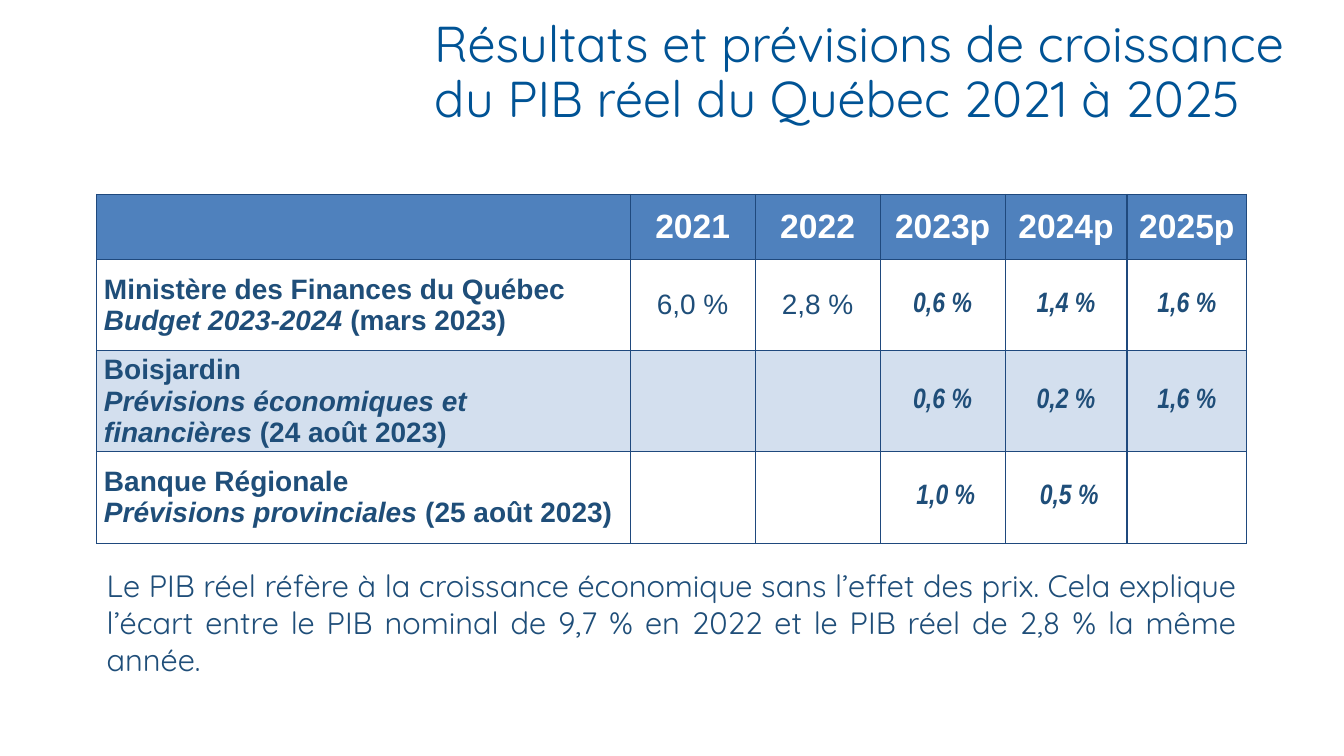
import pptx
import pptx.dml.color
import pptx.enum.text
import pptx.oxml
import pptx.oxml.ns
import pptx.util

Cm = pptx.util.Cm
ALIGN = pptx.enum.text.PP_ALIGN
COLOURS = {"title": "005395", "text": "1F4E79", "white": "FFFFFF",
           "header": "4F81BD", "band": "D3DFEE", "border": "1F497D"}
COLUMNS = [13.44, 3.15, 3.15, 3.15, 3.07, 3.02]
ROWS = [1.63, 2.31, 2.26, 2.31]
YEARS = ["", "2021", "2022", "2023p", "2024p", "2025p"]
FORECASTS = [
    (("Ministère des Finances du Québec", "Budget 2023-2024 ", "(mars 2023)"),
     ["6,0 %", "2,8 %", "0,6 %", "1,4 %", "1,6 %"]),
    (("Boisjardin", "Prévisions économiques et financières ", "(24 août 2023)"),
     ["", "", "0,6 %", "0,2 %", "1,6 %"]),
    (("Banque Régionale", "Prévisions provinciales ", "(25 août 2023)"),
     ["", "", " 1,0 %", " 0,5 %", ""]),
]


def add_span(para, text, size=20, font="Arial", colour="text", bold=False, italic=False):
    """Append formatted text to a paragraph."""
    span = para.add_run()
    span.text = text
    span.font.size = pptx.util.Pt(size)
    span.font.name = font
    span.font.bold = bold
    span.font.italic = italic
    span.font.color.rgb = pptx.dml.color.RGBColor.from_string(COLOURS[colour])


def add_text(page, box, text, align=ALIGN.LEFT, spacing=1.0, **style):
    """Place a wrapped text box holding one paragraph."""
    frame = page.shapes.add_textbox(*map(Cm, box)).text_frame
    frame.word_wrap = True
    para = frame.paragraphs[0]
    para.alignment = align
    para.line_spacing = spacing
    add_span(para, text, **style)


def style_cell(cell, fill):
    """Give a cell its borders, margins and fill."""
    properties = cell._tc.get_or_add_tcPr()
    for side in ("lnL", "lnR", "lnT", "lnB"):
        properties.append(pptx.oxml.parse_xml(
            f'<a:{side} {pptx.oxml.ns.nsdecls("a")} w="12700"><a:solidFill>'
            f'<a:srgbClr val="{COLOURS["border"]}"/></a:solidFill></a:{side}>'))
    cell.vertical_anchor = pptx.enum.text.MSO_ANCHOR.MIDDLE
    cell.margin_left = cell.margin_right = Cm(0.18)
    cell.margin_top = cell.margin_bottom = 0
    cell.fill.solid()
    cell.fill.fore_color.rgb = pptx.dml.color.RGBColor.from_string(COLOURS[fill])


def fill_value(cell, text, **style):
    """Write centred text in a cell that has any."""
    if text:
        para = cell.text_frame.paragraphs[0]
        para.alignment = ALIGN.CENTER
        add_span(para, text, **style)


def fill_source(cell, name, publication, date):
    """Write the forecaster, its publication and the date."""
    frame = cell.text_frame
    add_span(frame.paragraphs[0], name, bold=True)
    para = frame.add_paragraph()
    add_span(para, publication, bold=True, italic=True)
    add_span(para, date, bold=True)


def add_forecasts(page, left, top):
    """Build the table of growth results and forecasts."""
    table = page.shapes.add_table(len(ROWS), len(COLUMNS), Cm(left), Cm(top),
                                  Cm(sum(COLUMNS)), Cm(sum(ROWS))).table
    for column, width in zip(table.columns, COLUMNS):
        column.width = Cm(width)
    for row, height, fill in zip(table.rows, ROWS, ["header", "white", "band", "white"]):
        row.height = Cm(height)
        for cell in row.cells:
            style_cell(cell, fill)
    for index, year in enumerate(YEARS):
        fill_value(table.cell(0, index), year, size=24, colour="white", bold=True)
    for line, (source, values) in enumerate(FORECASTS, 1):
        fill_source(table.cell(line, 0), *source)
        for index, value in enumerate(values, 1):
            forecast = YEARS[index].endswith("p")
            fill_value(table.cell(line, index), value, bold=forecast, italic=forecast,
                       font="Arial Narrow" if forecast else "Arial")


def main():
    """Build and save the deck."""
    deck = pptx.Presentation()
    deck.slide_width, deck.slide_height = Cm(33.87), Cm(19.05)
    page = deck.slides.add_slide(deck.slide_layouts[6])
    add_text(page, (10.69, 0.36, 22.89, 3.23),
             "Résultats et prévisions de croissance du PIB réel du Québec 2021 à 2025",
             spacing=0.9, size=36, font="Quicksand", colour="title")
    add_forecasts(page, 2.44, 4.9)
    add_text(page, (2.44, 14.15, sum(COLUMNS), 4.01),
             "Le PIB réel réfère à la croissance économique sans l’effet des prix. "
             "Cela explique l’écart entre le PIB nominal de 9,7 % en 2022 et le PIB réel "
             "de 2,8 % la même année.",
             align=ALIGN.JUSTIFY, size=22, font="Quicksand")
    deck.save("out.pptx")


if __name__ == "__main__":
    main()
